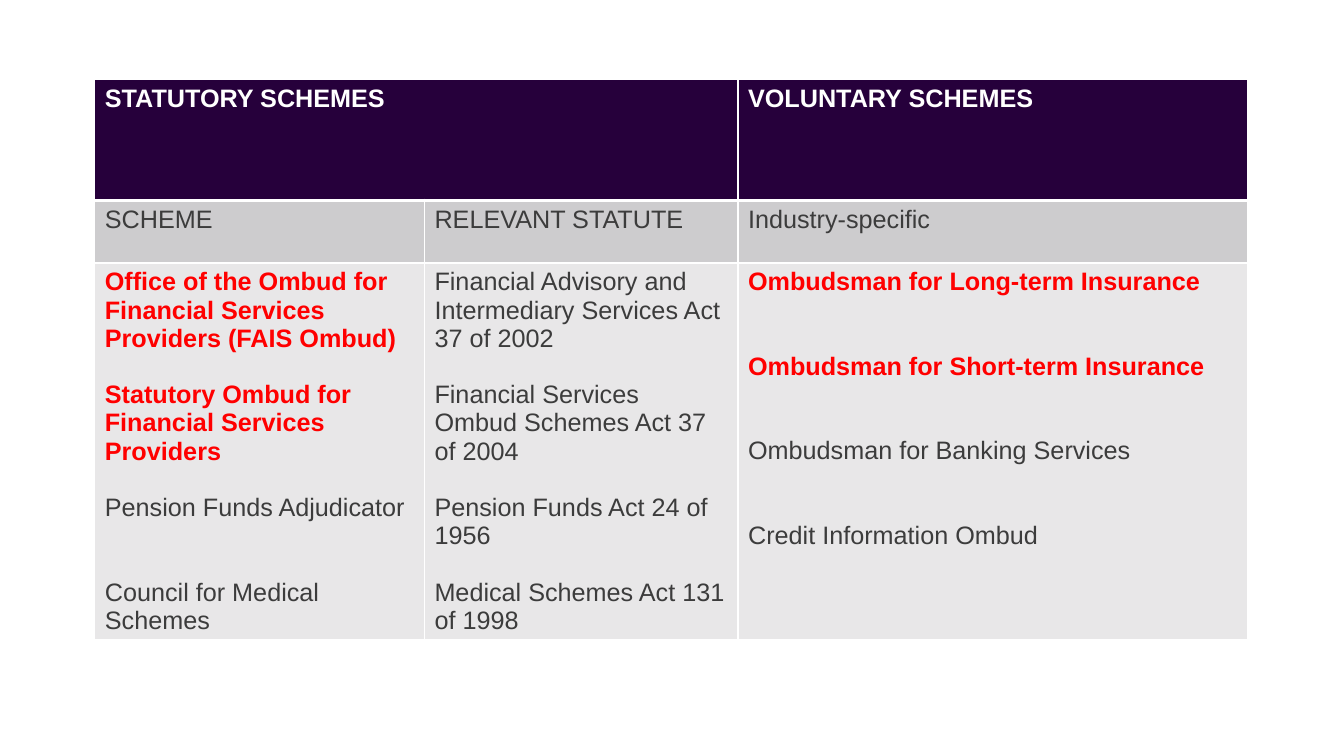
from lxml import etree
from pptx import Presentation
from pptx.dml.color import RGBColor
from pptx.enum.text import MSO_ANCHOR
from pptx.oxml.ns import qn
from pptx.util import Inches, Pt

TOP = MSO_ANCHOR.TOP
LINE = 20.1  # height of one text line in points
HUE = {"white": "FFFFFF", "plum": "26003B", "grey": "CDCCCE",
       "pale": "E8E7E8", "ink": "3C3C3C", "red": "FF0000"}


def write(para, text, color="ink", bold=False, gap=0):
    """Fill a paragraph, with a gap above it counted in text lines."""
    para.text = text
    if gap:
        para.space_before = Pt(gap * LINE)
    font = para.font
    font.name, font.size, font.bold = "Arial", Pt(18), bold
    font.color.rgb = RGBColor.from_string(HUE[color])


def paint(cell, color, base=1):
    """Give a cell white borders and a solid fill."""
    props = cell._tc.get_or_add_tcPr()
    for side in ("lnL", "lnR", "lnT", "lnB"):
        width = base if side == "lnB" else 1
        edge = etree.SubElement(props, qn("a:" + side), w=str(Pt(width)))
        solid = etree.SubElement(edge, qn("a:solidFill"))
        etree.SubElement(solid, qn("a:srgbClr"), val=HUE["white"])
    cell.fill.solid()
    cell.fill.fore_color.rgb = RGBColor.from_string(HUE[color])
    cell.vertical_anchor = TOP


prs = Presentation()
prs.slide_width, prs.slide_height = Inches(13.33), Inches(7.5)
slide = prs.slides.add_slide(prs.slide_layouts[6])

# Table grid
cols = [3.27, 3.11, 5.05]
rows = [1.2, 0.62, 3.73]
table = slide.shapes.add_table(
    len(rows), len(cols), Inches(0.94), Inches(0.79),
    Inches(sum(cols)), Inches(sum(rows))).table
for col, width in zip(table.columns, cols):
    col.width = Inches(width)
for row, height in zip(table.rows, rows):
    row.height = Inches(height)

# Fills and borders
for r, color in enumerate(["plum", "grey", "pale"]):
    for cell in table.rows[r].cells:
        paint(cell, color, base=1 if r else 3)
table.cell(0, 0).merge(table.cell(0, 1))

# Headings
for c, text in [(0, "STATUTORY SCHEMES"), (2, "VOLUNTARY SCHEMES")]:
    write(table.cell(0, c).text_frame.paragraphs[0], text,
          color="white", bold=True)
for c, text in enumerate(["SCHEME", "RELEVANT STATUTE", "Industry-specific"]):
    write(table.cell(1, c).text_frame.paragraphs[0], text)

# Schemes and statutes: text and the gap above it; the first "key" are red
lists = [
    (2, [("Office of the Ombud for Financial Services Providers (FAIS Ombud)", 0),
         ("Statutory Ombud for Financial Services Providers", 1),
         ("Pension Funds Adjudicator", 1),
         ("Council for Medical Schemes", 2)]),
    (0, [("Financial Advisory and Intermediary Services Act 37 of 2002", 0),
         ("Financial Services Ombud Schemes Act 37 of 2004", 1),
         ("Pension Funds Act 24 of 1956", 1),
         ("Medical Schemes Act 131 of 1998", 1)]),
    (2, [("Ombudsman for Long-term Insurance", 0),
         ("Ombudsman for Short-term Insurance", 2),
         ("Ombudsman for Banking Services", 2),
         ("Credit Information Ombud", 2)]),
]
for c, (key, items) in enumerate(lists):
    frame = table.cell(2, c).text_frame
    for i, (text, gap) in enumerate(items):
        para = frame.add_paragraph() if i else frame.paragraphs[0]
        write(para, text, color="red" if i < key else "ink",
              bold=i < key, gap=gap)

prs.save("out.pptx")
